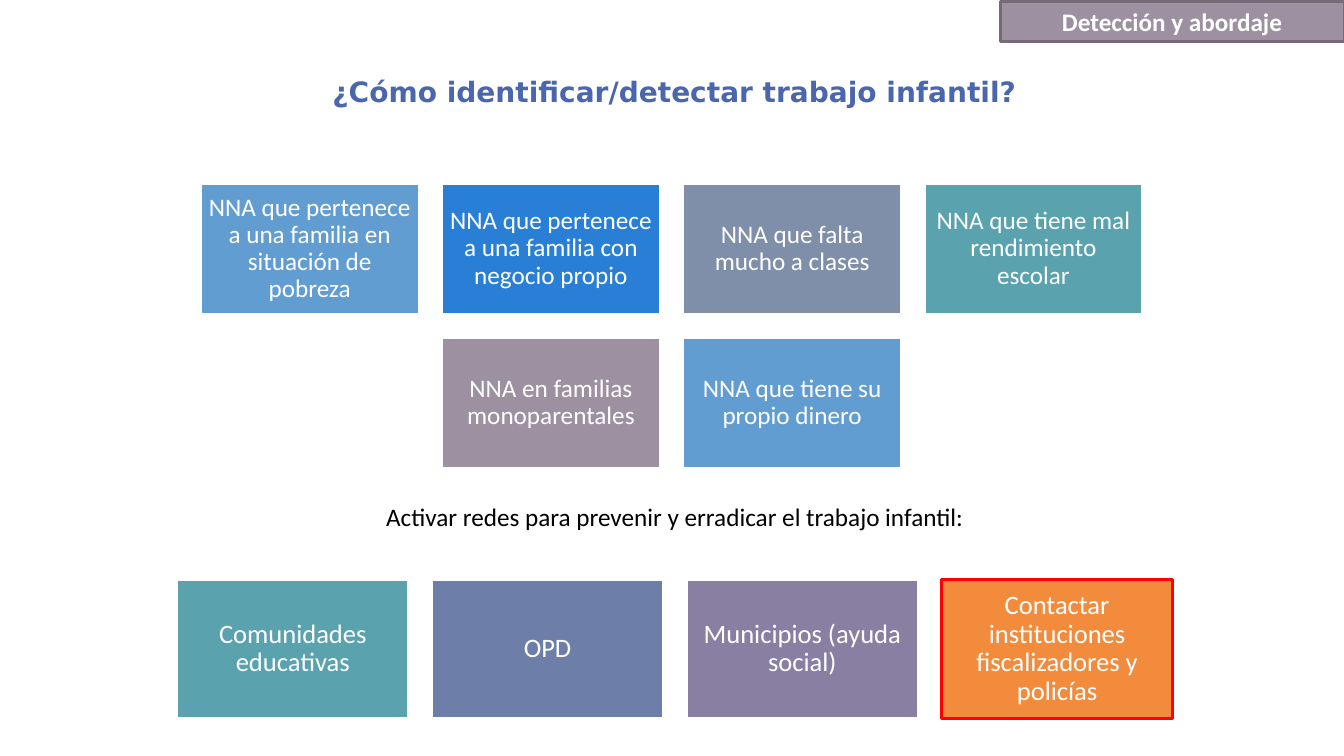
from pptx import Presentation
from pptx.dml.color import RGBColor
from pptx.enum.shapes import MSO_SHAPE
from pptx.enum.text import MSO_ANCHOR, MSO_AUTO_SIZE, PP_ALIGN
from pptx.util import Cm, Pt

COLORS = {
    "white": "FFFFFF",
    "black": "000000",
    "title": "4A66AC",
    "sky": "629DD1",
    "blue": "297FD5",
    "slate": "7F8FA9",
    "teal": "5AA2AE",
    "mauve": "9D90A0",
    "mauve_dark": "746B76",
    "indigo": "6D7FA8",
    "purple": "887FA3",
    "orange": "F38B3D",
    "red": "FF0000",
}

SIGNS_TOP = [
    ("NNA que pertenece a una familia en situación de pobreza", "sky", "white"),
    ("NNA que pertenece a una familia con negocio propio", "blue", "white"),
    ("NNA que falta mucho a clases", "slate", "white"),
    ("NNA que tiene mal rendimiento escolar", "teal", "white"),
]
SIGNS_BOTTOM = [
    ("NNA en familias monoparentales", "mauve", "white"),
    ("NNA que tiene su propio dinero", "sky", "white"),
]
NETWORKS = [
    ("Comunidades educativas", "teal", "white"),
    ("OPD", "indigo", "white"),
    ("Municipios (ayuda social)", "purple", "white"),
    ("Contactar instituciones fiscalizadores y policías", "orange", "red"),
]


def color(name):
    return RGBColor.from_string(COLORS[name])


def write(box, text, size, ink, font="Calibri", bold=False):
    frame = box.text_frame
    frame.word_wrap = True
    frame.auto_size = MSO_AUTO_SIZE.NONE
    para = frame.paragraphs[0]
    para.alignment = PP_ALIGN.CENTER
    span = para.add_run()
    span.text = text
    span.font.name = font
    span.font.size = Pt(size)
    span.font.bold = bold
    span.font.color.rgb = color(ink)
    return frame


def add_block(page, area, text, size, fill, line, bold=False):
    box = page.shapes.add_shape(MSO_SHAPE.RECTANGLE, *map(Cm, area))
    box.shadow.inherit = False
    box.fill.solid()
    box.fill.fore_color.rgb = color(fill)
    box.line.color.rgb = color(line)
    box.line.width = Pt(2)
    frame = write(box, text, size, "white", bold=bold)
    frame.vertical_anchor = MSO_ANCHOR.MIDDLE
    return frame


def add_row(page, cards, left, top, width, height, pitch, size, inset):
    for column, (text, fill, line) in enumerate(cards):
        area = (left + column * pitch, top, width, height)
        frame = add_block(page, area, text, size, fill, line)
        frame.margin_left = frame.margin_right = Cm(inset)
        frame.margin_top = frame.margin_bottom = Cm(inset)
        frame.paragraphs[0].line_spacing = 0.9


def add_title(page, text):
    title = page.shapes.title
    title.left, title.top = Cm(7.26), Cm(1.75)
    title.width, title.height = Cm(19.48), Cm(1.42)
    frame = write(title, text, 20, "title", "DejaVu Sans", True)
    frame.vertical_anchor = MSO_ANCHOR.TOP


def add_caption(page, text):
    box = page.shapes.add_textbox(Cm(4.52), Cm(12.52), Cm(24.97), Cm(1.02))
    write(box, text, 18, "black")


def main():
    """Build the slide on detecting child labour and save it."""
    deck = Presentation()
    deck.slide_width, deck.slide_height = Cm(33.87), Cm(19.05)
    page = deck.slides.add_slide(deck.slide_layouts[5])
    sign = {"width": 5.51, "height": 3.3, "pitch": 6.08, "size": 18, "inset": 0.18}
    add_row(page, SIGNS_TOP, 5.05, 4.62, **sign)
    add_row(page, SIGNS_BOTTOM, 5.05 + sign["pitch"], 8.51, **sign)
    add_title(page, "¿Cómo identificar/detectar trabajo infantil?")
    add_caption(page, "Activar redes para prevenir y erradicar el trabajo infantil:")
    add_row(page, NETWORKS, 4.46, 14.6, 5.84, 3.5, 6.42, 19, 0.2)
    add_block(page, (25.21, 0.03, 8.66, 1.02), "Detección y abordaje",
              18, "mauve", "mauve_dark", bold=True)
    deck.save("out.pptx")


if __name__ == "__main__":
    main()
